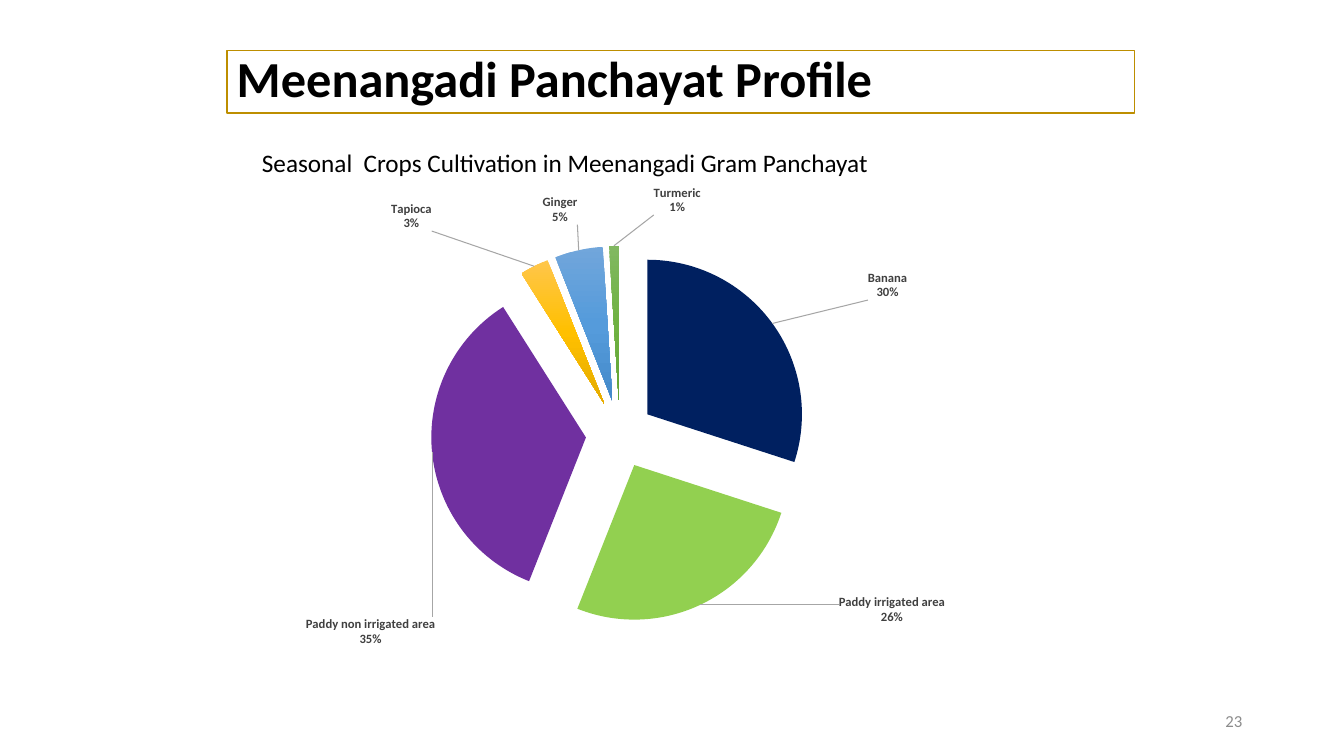
from copy import deepcopy

from pptx import Presentation
from pptx.chart.data import CategoryChartData
from pptx.dml.color import RGBColor
from pptx.enum.chart import XL_CHART_TYPE as ChartType, XL_LABEL_POSITION as LabelPos
from pptx.enum.shapes import MSO_SHAPE as Shape
from pptx.enum.text import MSO_ANCHOR as Anchor, PP_ALIGN as Align
from pptx.oxml import parse_xml
from pptx.oxml.ns import nsdecls
from pptx.util import Inches, Pt

# Content
FONT = "Calibri"
COLORS = {"text": "000000", "frame": "BD8E00", "label": "404040",
          "leader": "A6A6A6", "page": "8C8C8C",
          "navy": "002060", "lime": "92D050", "purple": "7030A0"}
GRADIENTS = {"gold": ("FFC64B", "FFC000", "E3AB00"),
             "blue": ("71A6DB", "559BDB", "448ACA"),
             "green": ("81B861", "6FB242", "62A336")}
TITLE = "Meenangadi Panchayat Profile"
SUBTITLE = "Seasonal  Crops Cultivation in Meenangadi Gram Panchayat"
PAGE = "23"
# Crop, share, fill, label shift as fractions of the chart
CROPS = [
    ("Banana", 0.30, "navy", (0.10, -0.04)),
    ("Paddy irrigated area", 0.26, "lime", (0.15, -0.03)),
    ("Paddy non irrigated area", 0.35, "purple", (0.01, 0.33)),
    ("Tapioca", 0.03, "gold", (-0.11, -0.06)),
    ("Ginger", 0.05, "blue", (0, -0.04)),
    ("Turmeric", 0.01, "green", (0.07, -0.05)),
]
EXPLOSION = 22
PLOT = {"x": 0.035, "y": 0.139, "w": 0.814, "h": 0.756}


def rgb(name):
    return RGBColor.from_string(COLORS[name])


def chart_xml(markup):
    """Parse one chart element, with its namespaces added."""
    tag, rest = markup[:-2].split(" ", 1) if markup.endswith("/>") else (markup, "")
    if rest:
        return parse_xml(f"{tag} {nsdecls('c', 'a')} {rest}/>")
    head, tail = markup.split(">", 1)
    return parse_xml(f"{head} {nsdecls('c', 'a')}>{tail}")


def write(shape, text, size=18, color="text", bold=False, align=Align.LEFT,
          anchor=Anchor.TOP, spacing=None):
    frame = shape.text_frame
    frame.word_wrap = True
    frame.vertical_anchor = anchor
    line = frame.paragraphs[0]
    line.alignment = align
    line.line_spacing = spacing
    run = line.add_run()
    run.text = text
    run.font.name, run.font.size, run.font.bold = FONT, Pt(size), bold
    run.font.color.rgb = rgb(color)


def paint(fill, name):
    if name in COLORS:
        fill.solid()
        fill.fore_color.rgb = rgb(name)
        return
    fill.gradient()
    fill.gradient_angle = 270
    first = fill._xPr.xpath(".//a:gs")[0]
    first.addnext(deepcopy(first))
    for stop, place, shade in zip(fill.gradient_stops, (0, 0.5, 1), GRADIENTS[name]):
        stop.position = place
        stop.color.rgb = RGBColor.from_string(shade)


prs = Presentation()
prs.slide_width, prs.slide_height = Inches(13.33), Inches(7.5)
slide = prs.slides.add_slide(prs.slide_layouts[6])
shapes = slide.shapes

# Framed title
title = shapes.add_shape(Shape.RECTANGLE, Inches(2.25), Inches(0.5), Inches(9), Inches(0.62))
title.shadow.inherit = False
title.fill.background()
title.line.color.rgb = rgb("frame")
title.line.width = Pt(1)
write(title, TITLE, size=36, bold=True, anchor=Anchor.MIDDLE, spacing=0.9)

# Subtitle and page number
subtitle = shapes.add_textbox(Inches(2.5), Inches(1.41), Inches(7.17), Inches(0.4))
write(subtitle, SUBTITLE)
page = shapes.add_textbox(Inches(9.42), Inches(6.95), Inches(3), Inches(0.4))
write(page, PAGE, size=12, color="page", align=Align.RIGHT, anchor=Anchor.MIDDLE)

# Pie of crops
crop_data = CategoryChartData(number_format="0%")
crop_data.categories = [crop for crop, *_ in CROPS]
crop_data.add_series("Series 1", [share for _, share, *_ in CROPS])
pie = shapes.add_chart(ChartType.PIE, Inches(2.17), Inches(1.75), Inches(9), Inches(4.95),
                       crop_data).chart
pie.has_legend = False
pie.has_title = False
pie.font.name, pie.font.size = FONT, Pt(10)
pie.font.color.rgb = rgb("text")
pie.plots[0].vary_by_categories = True

plot_area = pie._chartSpace.xpath(".//c:plotArea")[0]
for layout in plot_area.xpath("c:layout"):
    plot_area.remove(layout)
sides = "".join(f'<c:{side} val="{part}"/>' for side, part in PLOT.items())
plot_area.insert(0, chart_xml(
    '<c:layout><c:manualLayout><c:layoutTarget val="inner"/><c:xMode val="edge"/>'
    f'<c:yMode val="edge"/>{sides}</c:manualLayout></c:layout>'))

# Slices
shares = pie.plots[0].series[0]
for index, (_, _, color, _) in enumerate(CROPS):
    paint(shares.points[index].format.fill, color)
shares._element.xpath("c:tx")[0].addnext(chart_xml(f'<c:explosion val="{EXPLOSION}"/>'))

# Labels, each shifted from the slice's outer edge
labels = shares.data_labels
labels.number_format, labels.number_format_is_linked = "0%", False
labels.font.name, labels.font.size, labels.font.bold = FONT, Pt(9), True
labels.font.color.rgb = rgb("label")
labels.position = LabelPos.OUTSIDE_END
labels.show_value = labels.show_category_name = True
group = labels._element
group.xpath("c:showBubbleSize")[0].addnext(chart_xml("<c:separator>\n</c:separator>"))
shared = [part for part in group if not part.tag.endswith("showLeaderLines")]
for index, (*_, (dx, dy)) in enumerate(CROPS):
    label = chart_xml(
        f'<c:dLbl><c:idx val="{index}"/><c:layout><c:manualLayout>'
        f'<c:x val="{dx}"/><c:y val="{dy}"/></c:manualLayout></c:layout></c:dLbl>')
    label.extend(deepcopy(part) for part in shared)
    group.insert(index, label)

# Leader lines
for old in group.xpath("c:showLeaderLines"):
    group.remove(old)
group.append(chart_xml('<c:showLeaderLines val="1"/>'))
group.append(chart_xml(
    '<c:leaderLines><c:spPr><a:ln w="9525"><a:solidFill>'
    f'<a:srgbClr val="{COLORS["leader"]}"/></a:solidFill></a:ln></c:spPr></c:leaderLines>'))

prs.save("out.pptx")
